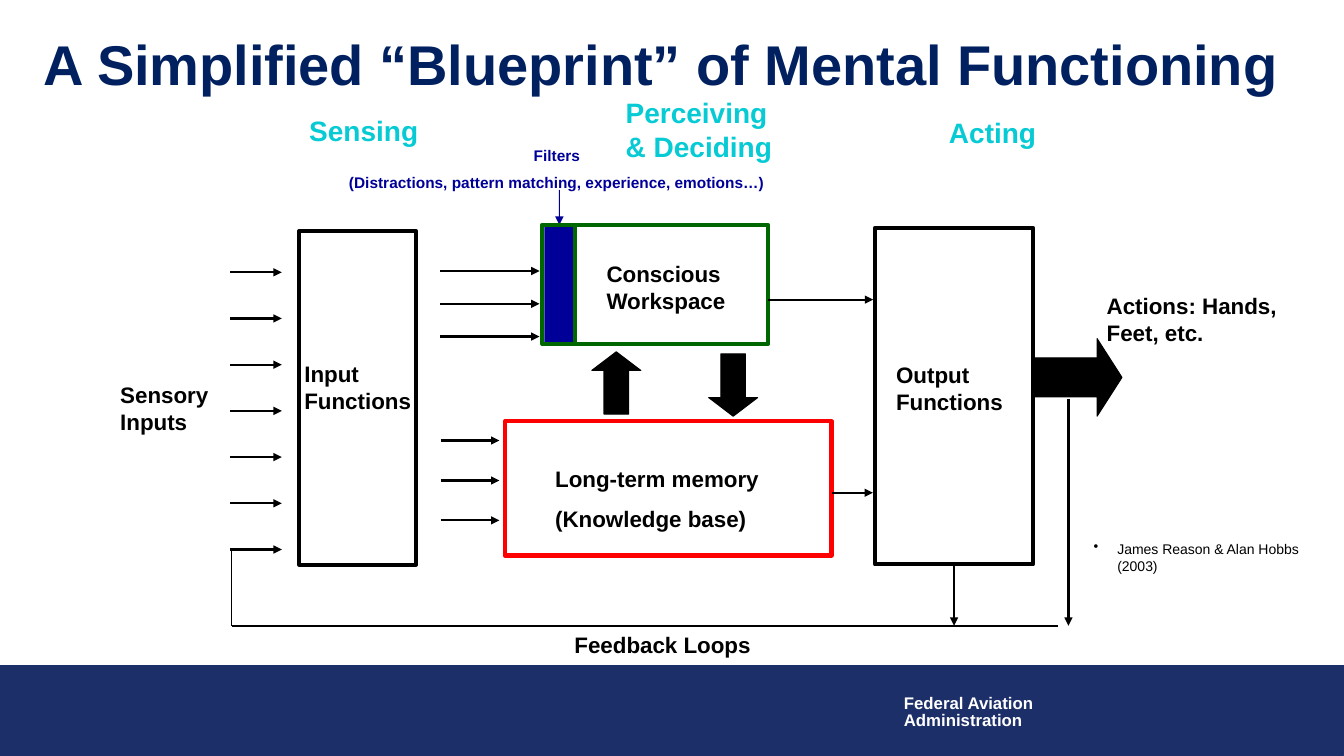
import pptx
import pptx.dml.color
import pptx.enum.shapes
import pptx.enum.text
import pptx.oxml
import pptx.oxml.ns
import pptx.util

Pt = pptx.util.Pt
SHAPES = pptx.enum.shapes.MSO_SHAPE
COLORS = {
    "black": "000000", "white": "FFFFFF", "footer": "1D2F68", "title": "002060",
    "stage": "06CAD4", "filter": "000099", "workspace": "006600", "memory": "FF0000",
}


def rgb(name):
    """Return the named colour."""
    return pptx.dml.color.RGBColor.from_string(COLORS[name])


def add_block(slide, box, fill=None, line=None, weight=0.75, kind=SHAPES.RECTANGLE):
    """Add a preset shape with optional fill and outline."""
    shape = slide.shapes.add_shape(kind, *map(Pt, box))
    shape.shadow.inherit = False
    if fill:
        shape.fill.solid()
        shape.fill.fore_color.rgb = rgb(fill)
    else:
        shape.fill.background()
    if line:
        shape.line.color.rgb = rgb(line)
        shape.line.width = Pt(weight)
    else:
        shape.line.fill.background()
    return shape


def add_block_arrow(slide, box, kind, head):
    """Add a thick black arrow with the given head length."""
    shape = add_block(slide, box, "black", "black", kind=kind)
    shape.adjustments[0] = 0.5
    shape.adjustments[1] = head


def add_line(slide, start, end, color="black", weight=1.5, arrow=True):
    """Add a straight line, with an arrowhead at its end by default."""
    connector = slide.shapes.add_connector(
        pptx.enum.shapes.MSO_CONNECTOR.STRAIGHT, *map(Pt, (*start, *end)))
    connector.line.color.rgb = rgb(color)
    connector.line.width = Pt(weight)
    if arrow:
        tail = pptx.oxml.parse_xml(
            f'<a:tailEnd {pptx.oxml.ns.nsdecls("a")} type="triangle"/>')
        connector.line._get_or_add_ln().append(tail)
    effects = pptx.oxml.parse_xml(f'<a:effectLst {pptx.oxml.ns.nsdecls("a")}/>')
    connector._element.spPr.append(effects)
    return connector


def add_arrow_stack(slide, left, right, top, step, count):
    """Add evenly spaced arrows pointing right."""
    for index in range(count):
        y = top + index * step
        add_line(slide, (left, y), (right, y))


def add_text(slide, box, text, size=16, color="black", bold=True, gap=0, wrap=True):
    """Add a text box and return its paragraphs."""
    frame = slide.shapes.add_textbox(*map(Pt, box)).text_frame
    frame.word_wrap = wrap
    frame.text = text
    for index, paragraph in enumerate(frame.paragraphs):
        if index and gap:
            paragraph.space_before = Pt(gap)
        for run in paragraph.runs:
            run.font.name = "Arial"
            run.font.size = Pt(size)
            run.font.bold = bold
            run.font.color.rgb = rgb(color)
    return frame.paragraphs


def add_footer(slide, left, top, width, height):
    """Draw the footer band with the agency name."""
    add_block(slide, (left, top, width, height), "footer", "footer")
    paragraphs = add_text(slide, (left + 638.6, top + 18, 108, 31.7),
                          "Federal Aviation\nAdministration", 12, "white", wrap=False)
    for paragraph in paragraphs:
        paragraph.line_spacing = 0.85


def add_header(slide, left, top, width, height):
    """Draw the title and the three stage headings."""
    add_text(slide, (left, top, width, height),
             "A Simplified “Blueprint” of Mental Functioning", 40, "title")
    stages = (("Sensing", 190, 60, 101), ("Perceiving\v& Deciding", 416, 47.5, 134),
              ("Acting", 647, 61.5, 92))
    for name, x, y, span in stages:
        add_text(slide, (left + x, top + y, span, 32), name, 20, "stage")


def add_input(slide, left, top, width, height):
    """Draw the input block with its sensory arrows."""
    add_block(slide, (left, top, width, height), line="black", weight=2.75)
    add_text(slide, (left - 3.5, top + 89, 95, 46), "Input Functions")
    add_text(slide, (left - 135, top + 103.7, 82, 46), "Sensory\nInputs")
    add_arrow_stack(slide, left - 49.5, left - 12.5, top + 29.5, 33, 7)


def add_workspace(slide, left, top, width, height):
    """Draw the conscious workspace, its filter and its arrows."""
    paragraphs = add_text(slide, (left - 221.5, top - 60, 463.7, 40),
                          "Filters\n(Distractions, pattern matching, experience, emotions…)",
                          11, "filter", gap=6.5)
    for paragraph in paragraphs:
        paragraph.alignment = pptx.enum.text.PP_ALIGN.CENTER
    bar = add_block(slide, (left + 1.4, top, 21.6, height + 1), "filter")
    pointer = add_line(slide, (left + 12.2, top - 25), (left + 12.2, top), "filter", 0.75)
    pointer.end_connect(bar, 0)
    add_line(slide, (left + 23.5, top), (left + 23.5, top + height),
             "workspace", 3, arrow=False)
    add_block(slide, (left, top, width, height), line="workspace", weight=3)
    add_text(slide, (left + 38.8, top + 21.6, 112, 46), "Conscious Workspace")
    add_arrow_stack(slide, left - 73, left - 2, top + 33, 23.4, 3)
    add_line(slide, (left + width, top + 53.4), (left + width + 75, top + 53.4))


def add_memory(slide, left, top, width, height):
    """Draw the long-term memory and its arrows."""
    add_block(slide, (left, top, width, height), line="memory", weight=3)
    add_text(slide, (left + 28.8, top + 28, 200, 55.4),
             "Long-term memory\n(Knowledge base)", gap=9)
    add_arrow_stack(slide, left - 46, left - 4, top + 13.7, 28.5, 3)
    add_line(slide, (left + width, top + 51), (left + width + 29.5, top + 51))
    add_block_arrow(slide, (left + 62, top - 49.7, 35, 44.6), SHAPES.UP_ARROW, 0.38)
    add_block_arrow(slide, (left + 145.5, top - 48.3, 35, 44.6), SHAPES.DOWN_ARROW, 0.38)


def add_output(slide, left, top, width, height):
    """Draw the output block and its action arrow, and return the block."""
    block = add_block(slide, (left, top, width, height), line="black", weight=2.75)
    add_text(slide, (left + 8, top + 92, 98, 46), "Output Functions")
    add_block_arrow(slide, (left + width, top + 79.2, 63.4, 55.4),
                    SHAPES.RIGHT_ARROW, 0.32)
    add_text(slide, (left + 158.4, top + 42.5, 154, 46), "Actions: Hands, Feet, etc.")
    return block


def add_feedback(slide, left, top, width, height, output):
    """Draw the loop from the output back to the input."""
    bottom = top + height
    drop = left + 515.9
    exit_x = left + width + 7.2
    link = add_line(slide, (drop, bottom - 44), (drop, bottom))
    link.begin_connect(output, 2)
    add_line(slide, (exit_x, top - 108), (exit_x, bottom))
    add_line(slide, (left, top), (left, bottom), weight=0.75, arrow=False)
    add_line(slide, (left, bottom), (left + width, bottom), arrow=False)
    add_text(slide, (left + 237.6, bottom, 181.4, 26.6), "Feedback Loops")


def add_citation(slide, left, top, width, height):
    """Draw the bulleted citation."""
    paragraph = add_text(slide, (left, top, width, height),
                         "James Reason & Alan Hobbs (2003)", 10, bold=False)[0]
    properties = paragraph._p.get_or_add_pPr()
    properties.set("marL", str(Pt(17)))
    properties.set("indent", str(-Pt(17)))
    properties.append(pptx.oxml.parse_xml(
        f'<a:buChar {pptx.oxml.ns.nsdecls("a")} char="•"/>'))


def main():
    """Build and save the slide."""
    presentation = pptx.Presentation()
    presentation.slide_width = Pt(960)
    presentation.slide_height = Pt(540)
    slide = presentation.slides.add_slide(presentation.slide_layouts[6])
    add_footer(slide, 0, 475.2, 960, 64.4)
    add_input(slide, 213.8, 165, 83.5, 238.3)
    add_workspace(slide, 387.4, 160.6, 161.3, 85)
    add_memory(slide, 360.7, 301, 233.3, 95.8)
    output = add_output(slide, 625, 162.7, 113, 240.5)
    add_feedback(slide, 165.6, 393, 590.4, 54, output)
    add_citation(slide, 774, 382.3, 180.7, 38)
    add_header(slide, 23.8, 17.3, 936, 55.4)
    presentation.save("out.pptx")


if __name__ == "__main__":
    main()
